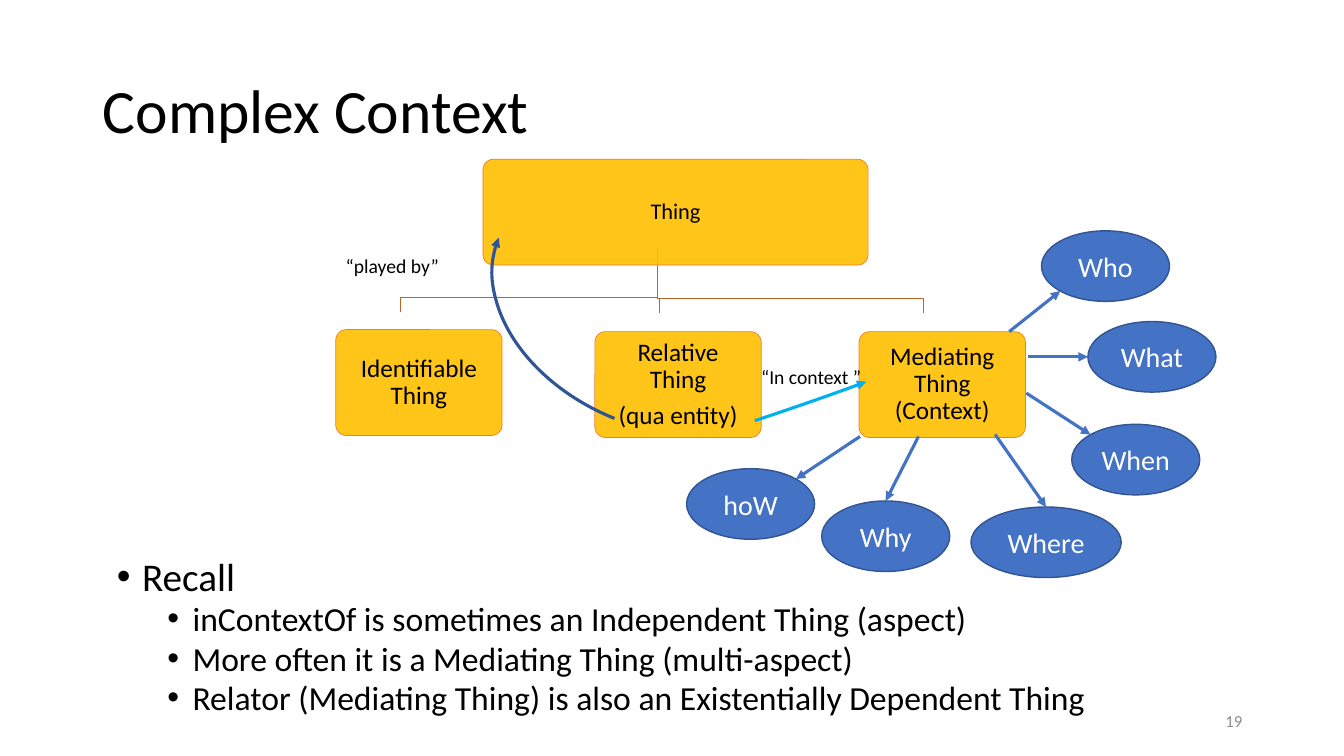
from dataclasses import dataclass
from math import cos, radians, sin

from lxml.etree import SubElement
from pptx import Presentation
from pptx.dml.color import RGBColor
from pptx.enum.shapes import MSO_CONNECTOR, MSO_SHAPE
from pptx.enum.text import MSO_ANCHOR, MSO_AUTO_SIZE, PP_ALIGN
from pptx.oxml.ns import qn
from pptx.util import Emu, Pt

EMU_PER_PX = 9144  # 100 px to the inch
FONT = "Calibri"
BLACK, WHITE, GREY = "000000", "FFFFFF", "8C8C8C"
GOLD, ORANGE, BROWN = "FFC000", "ED7D31", "BE6427"
BLUE, DARK_BLUE, NAVY, CYAN = "4472C4", "325491", "2F5597", "00B0F0"

# Connection sites of an ellipse and their directions in degrees, clockwise from the right
TOP, TOP_LEFT, LEFT, BOTTOM_LEFT, TOP_RIGHT = 0, 1, 2, 3, 7
SITE_ANGLES = {TOP: 270, TOP_LEFT: 225, LEFT: 180, BOTTOM_LEFT: 135, TOP_RIGHT: 315}


@dataclass
class Frame:
    left: int
    top: int
    width: int
    height: int

    def emu(self) -> list[Emu]:
        return [px(value) for value in (self.left, self.top, self.width, self.height)]


@dataclass
class Box:
    text: str
    frame: Frame
    size: int = 18


@dataclass
class Branch:
    x: int
    bend_y: int
    end_y: int


@dataclass
class Arc:
    frame: Frame
    rotation: float
    color: str
    end: float = 0
    flipped: bool = False


@dataclass
class Aspect:
    text: str
    frame: Frame
    site: int
    start: tuple[int, int]


@dataclass
class Label:
    text: str
    frame: Frame
    size: int = 14
    color: str = BLACK
    align: PP_ALIGN = PP_ALIGN.LEFT


TRUNK = (652, 246)
BRANCHES = [Branch(916, 296, 311), Branch(654, 296, 311), Branch(397, 295, 310)]
BOXES = [
    Box("Thing", Frame(479, 158, 382, 105), 16),
    Box("Identifiable Thing", Frame(333, 327, 165, 105)),
    Box("Relative Thing\n(qua entity)", Frame(590, 329, 165, 105)),
    Box("Mediating Thing (Context)", Frame(852, 329, 165, 105)),
]
ARCS = [
    Arc(Frame(534, 395, 422, 23), 341.7, CYAN, 213.2, True),
    Arc(Frame(482, 177, 347, 247), 201.9, NAVY),
]
LABELS = [
    Label("“In context ”", Frame(745, 356, 181, 35)),
    Label("“played by”", Frame(333, 246, 129, 35)),
    Label("19", Frame(942, 695, 300, 40), 12, GREY, PP_ALIGN.RIGHT),
]
ASPECTS = [
    Aspect("Who", Frame(1033, 229, 127, 70), BOTTOM_LEFT, (1001, 329)),
    Aspect("What", Frame(1079, 319, 127, 70), LEFT, (1020, 354)),
    Aspect("When", Frame(1063, 421, 127, 70), TOP_LEFT, (1018, 390)),
    Aspect("Where", Frame(963, 503, 149, 70), TOP, (987, 431)),
    Aspect("Why", Frame(815, 497, 127, 70), TOP, (911, 433)),
    Aspect("hoW", Frame(681, 465, 127, 70), TOP_RIGHT, (853, 433)),
]
RECALL = [
    "Recall",
    "inContextOf is sometimes an Independent Thing (aspect)",
    "More often it is a Mediating Thing (multi-aspect)",
    "Relator (Mediating Thing) is also an Existentially Dependent Thing",
]


def px(value: float) -> Emu:
    return Emu(round(value * EMU_PER_PX))


def rgb(color: str) -> RGBColor:
    return RGBColor.from_string(color)


def set_line(shape, color: str, width: float, arrow: bool = False) -> None:
    shape.line.color.rgb = rgb(color)
    shape.line.width = Pt(width)
    if arrow:
        SubElement(shape.element.spPr.find(qn("a:ln")), qn("a:tailEnd"), type="triangle")


def format_text(shape, size: int, color: str, align: PP_ALIGN, spacing: float = 1) -> None:
    for paragraph in shape.text_frame.paragraphs:
        paragraph.alignment = align
        paragraph.line_spacing = spacing
        for run in paragraph.runs:
            run.font.name = FONT
            run.font.size = Pt(size)
            run.font.color.rgb = rgb(color)


def place(placeholder, frame: Frame, anchor: MSO_ANCHOR) -> None:
    placeholder.left, placeholder.top, placeholder.width, placeholder.height = frame.emu()
    placeholder.text_frame.auto_size = MSO_AUTO_SIZE.NONE
    placeholder.text_frame.vertical_anchor = anchor


def add_filled(slide, kind: MSO_SHAPE, frame: Frame, text: str, fill: str):
    shape = slide.shapes.add_shape(kind, *frame.emu())
    shape.shadow.inherit = False
    shape.fill.solid()
    shape.fill.fore_color.rgb = rgb(fill)
    shape.text_frame.text = text
    shape.text_frame.vertical_anchor = MSO_ANCHOR.MIDDLE
    return shape


def add_branch(slide, branch: Branch) -> None:
    builder = slide.shapes.build_freeform(*TRUNK, scale=EMU_PER_PX)
    corners = [(TRUNK[0], branch.bend_y), (branch.x, branch.bend_y), (branch.x, branch.end_y)]
    builder.add_line_segments(corners, close=False)
    shape = builder.convert_to_shape()
    shape.shadow.inherit = False
    shape.fill.background()
    set_line(shape, BROWN, 1)


def add_box(slide, box: Box) -> None:
    shape = add_filled(slide, MSO_SHAPE.ROUNDED_RECTANGLE, box.frame, box.text, GOLD)
    shape.adjustments[0] = 0.1
    color = shape.element.spPr.find(qn("a:solidFill"))[0]
    SubElement(color, qn("a:alpha"), val="90000")
    set_line(shape, ORANGE, 0.5)
    frame = shape.text_frame
    frame.margin_left = frame.margin_right = frame.margin_top = frame.margin_bottom = px(10)
    format_text(shape, box.size, BLACK, PP_ALIGN.CENTER, 0.9)
    for paragraph in frame.paragraphs:
        paragraph.space_after = Pt(6)


def add_arc(slide, arc: Arc) -> None:
    shape = slide.shapes.add_shape(MSO_SHAPE.ARC, *arc.frame.emu())
    shape.shadow.inherit = False
    shape.fill.background()
    shape.rotation = arc.rotation
    shape.adjustments[1] = arc.end
    if arc.flipped:
        shape.element.spPr.find(qn("a:xfrm")).set("flipV", "1")
    set_line(shape, arc.color, 2.25, arrow=True)


def add_label(slide, label: Label) -> None:
    shape = slide.shapes.add_textbox(*label.frame.emu())
    shape.text_frame.word_wrap = True
    shape.text_frame.vertical_anchor = MSO_ANCHOR.MIDDLE
    shape.text_frame.text = label.text
    format_text(shape, label.size, label.color, label.align)


def add_aspect(slide, aspect: Aspect) -> None:
    frame = aspect.frame
    ellipse = add_filled(slide, MSO_SHAPE.OVAL, frame, aspect.text, BLUE)
    set_line(ellipse, DARK_BLUE, 1)
    format_text(ellipse, 20, WHITE, PP_ALIGN.CENTER)
    angle = radians(SITE_ANGLES[aspect.site])
    tip_x = frame.left + frame.width / 2 * (1 + cos(angle))
    tip_y = frame.top + frame.height / 2 * (1 + sin(angle))
    ends = [px(value) for value in (*aspect.start, tip_x, tip_y)]
    connector = slide.shapes.add_connector(MSO_CONNECTOR.STRAIGHT, *ends)
    if aspect.site == TOP:
        connector.end_connect(ellipse, TOP)
    set_line(connector, BLUE, 2.25, arrow=True)
    SubElement(connector.element.spPr, qn("a:effectLst"))


def fill_recall(body) -> None:
    place(body, Frame(106, 552, 1112, 173), MSO_ANCHOR.TOP)
    body.text_frame.text = "\n".join(RECALL)
    format_text(body, 24, BLACK, PP_ALIGN.LEFT, 0.8)
    for index, paragraph in enumerate(body.text_frame.paragraphs):
        paragraph.level = min(index, 1)
        paragraph.space_before = Pt(5 if index else 10)
        properties = paragraph._p.get_or_add_pPr()
        properties.set("marL", str(px(75 if index else 25)))
        properties.set("indent", str(px(-25)))
        SubElement(properties, qn("a:buFont"), typeface="Arial")
        SubElement(properties, qn("a:buChar"), char="•")
    body.text_frame.paragraphs[0].runs[0].font.size = Pt(28)


def main() -> None:
    presentation = Presentation()
    presentation.slide_width, presentation.slide_height = px(1333), px(750)
    slide = presentation.slides.add_slide(presentation.slide_layouts[1])

    # Title and list
    title, body = slide.placeholders
    place(title, Frame(92, 40, 1150, 145), MSO_ANCHOR.MIDDLE)
    title.text_frame.text = "Complex Context"
    format_text(title, 44, BLACK, PP_ALIGN.LEFT, 0.9)
    fill_recall(body)

    # Hierarchy of things, relations and aspects, from back to front
    for draw, items in (
        (add_branch, BRANCHES),
        (add_box, BOXES),
        (add_arc, ARCS),
        (add_label, LABELS),
        (add_aspect, ASPECTS),
    ):
        for item in items:
            draw(slide, item)

    presentation.save("out.pptx")


if __name__ == "__main__":
    main()
